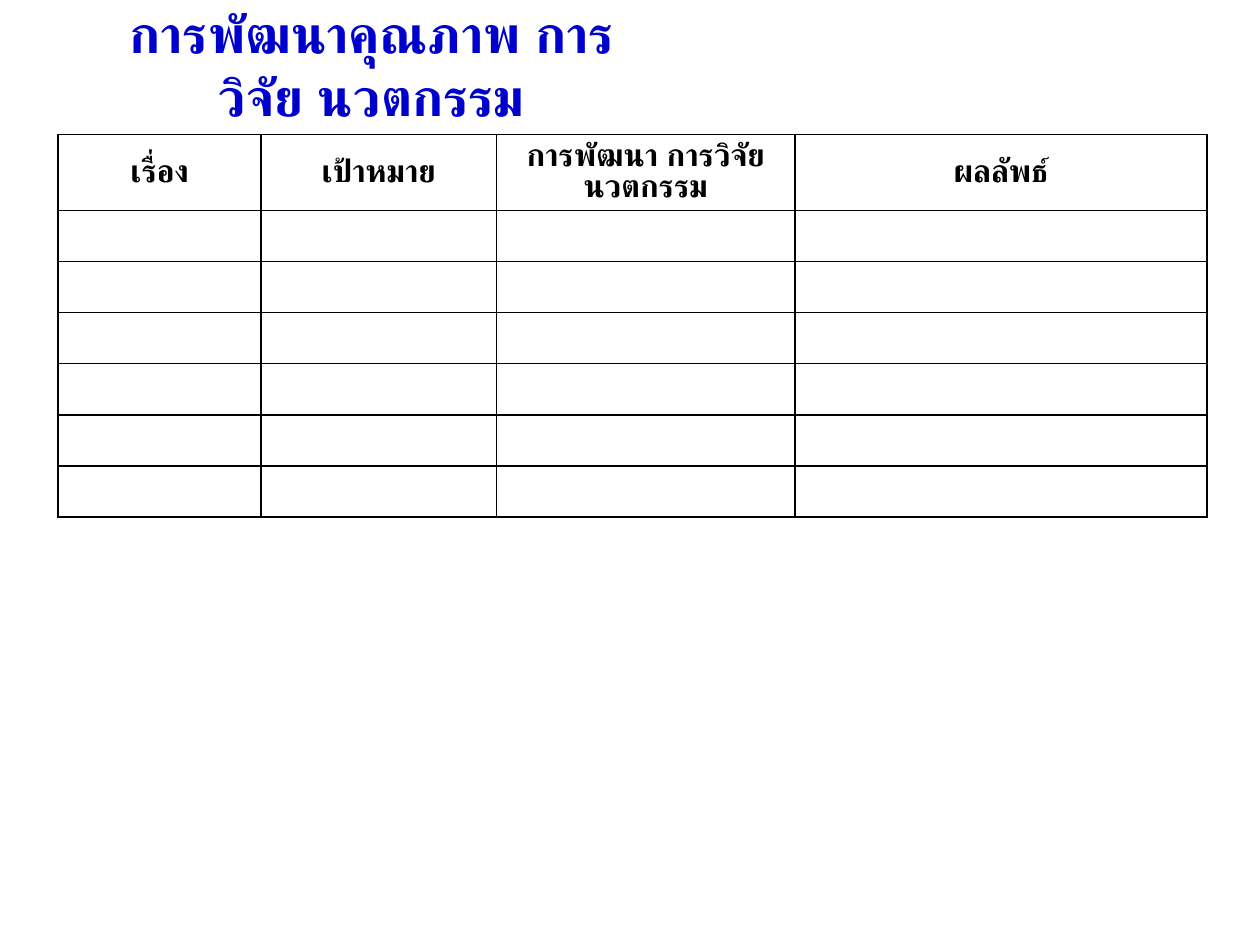
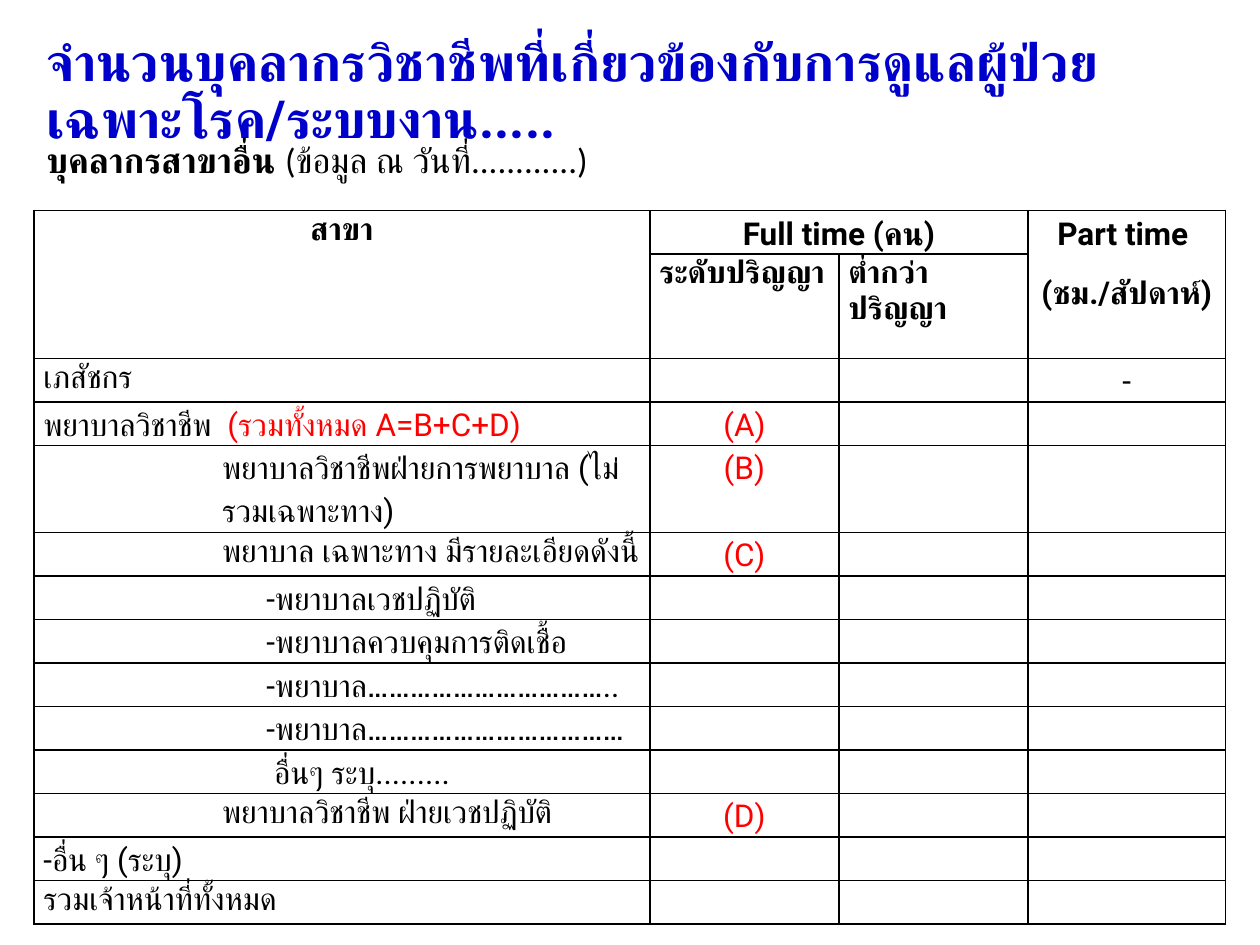
from lxml import etree
from pptx import Presentation
from pptx.dml.color import RGBColor
from pptx.enum import text as t
from pptx.oxml.ns import qn
from pptx.util import Pt

COLORS = {"title": "0000CC", "ink": "000000", "accent": "FF0000"}
FONT = "Roboto"
CENTER, LEFT = t.PP_ALIGN.CENTER, t.PP_ALIGN.LEFT
TOP, MIDDLE = t.MSO_ANCHOR.TOP, t.MSO_ANCHOR.MIDDLE

TOPIC_HEADS = ["เรื่อง", "เป้าหมาย", "การพัฒนา การวิจัย นวตกรรม", "ผลลัพธ์"]
STAFF_ROWS = [
    (0, "เภสัชกร", ""),
    (0, "พยาบาลวิชาชีพ  ", "(A)"),
    (1, "พยาบาลวิชาชีพฝ่ายการพยาบาล (ไม่รวมเฉพาะทาง)", "(B)"),
    (1, "พยาบาล เฉพาะทาง มีรายละเอียดดังนี้", "(C)"),
    (2, "-พยาบาลเวชปฏิบัติ", ""),
    (2, "-พยาบาลควบคุมการติดเชื้อ", ""),
    (2, "-พยาบาล……………………………..", ""),
    (2, "-พยาบาล………………………………", ""),
    (2, " อื่นๆ ระบุ.........", ""),
    (1, "พยาบาลวิชาชีพ ฝ่ายเวชปฏิบัติ", "(D)"),
    (0, "-อื่น ๆ (ระบุ)", ""),
    (0, "รวมเจ้าหน้าที่ทั้งหมด", ""),
]


def style(font, size, color="ink", bold=False, name=FONT):
    font.size, font.bold, font.name = Pt(size), bold, name
    font.color.rgb = RGBColor.from_string(COLORS[color])


def add_text(s, box, anchor=MIDDLE):
    tf = s.shapes.add_textbox(*map(Pt, box)).text_frame
    tf.word_wrap = True
    tf.vertical_anchor = anchor
    return tf


def add_title(s, box, title, align, spacing):
    p = add_text(s, box).paragraphs[0]
    p.text, p.alignment, p.line_spacing = title, align, spacing
    style(p.font, 30, "title", True)


def draw_borders(cell, open_sides=""):
    pr = cell._tc.get_or_add_tcPr()
    for side in "LRTB":
        ln = etree.SubElement(pr, qn("a:ln" + side), w=str(Pt(1)))
        if side in open_sides:
            etree.SubElement(ln, qn("a:noFill"))
        else:
            fill = etree.SubElement(ln, qn("a:solidFill"))
            etree.SubElement(fill, qn("a:srgbClr"), val=COLORS["ink"])


def add_grid(s, box, widths, heights, margin, open_sides=None):
    frame = s.shapes.add_table(len(heights), len(widths), *map(Pt, box))
    table = frame.table
    table.first_row = table.horz_banding = False
    for col, width in zip(table.columns, widths):
        col.width = Pt(width)
    for row, height in zip(table.rows, heights):
        row.height = Pt(height)
    for r in range(len(heights)):
        for c in range(len(widths)):
            cell = table.cell(r, c)
            draw_borders(cell, (open_sides or {}).get((r, c), ""))
            cell.fill.background()
            cell.margin_left = cell.margin_right = Pt(margin)
            cell.margin_top = cell.margin_bottom = 0
    return table


def write(cell, value, align=LEFT, color="ink", bold=False, spacing=1.15, after=10):
    cell.text = value
    for p in cell.text_frame.paragraphs:
        p.alignment, p.line_spacing, p.space_after = align, spacing, Pt(after)
        style(p.font, 18, color, bold)


def topic_table(s, box):
    table = add_grid(s, box, [116, 134.6, 170.6, 235.4], [29.2] * 7, 4.5)
    for c, head in enumerate(TOPIC_HEADS):
        cell = table.cell(0, c)
        write(cell, head, CENTER, bold=True, spacing=1, after=0)
        cell.vertical_anchor = MIDDLE


def staff_header(table):
    for first, last in [((0, 0), (1, 2)), ((0, 3), (0, 4)), ((0, 5), (1, 5))]:
        table.cell(*first).merge(table.cell(*last))
    heads = [(0, 0, "สาขา", CENTER), (0, 3, "Full time (คน)", CENTER),
             (0, 5, "Part time \n(ชม./สัปดาห์)", CENTER),
             (1, 3, "ระดับปริญญา", LEFT), (1, 4, "ต่ำกว่าปริญญา", LEFT)]
    for r, c, head, align in heads:
        write(table.cell(r, c), head, align, bold=True)


def staff_table(s, box):
    heights = [23.2, 46.3, 23.2, 23.5, 46.3] + [23.5] * 7 + [23.2] * 2
    open_sides = {}
    for r, (level, _, _) in enumerate(STAFF_ROWS, 2):
        for c in range(level):
            open_sides[r, c] = "LR" if c else "R"
        if level:
            open_sides[r, level] = "L"
    table = add_grid(s, box, [102.2, 25.2, 224.6, 108, 108, 113], heights, 5.4, open_sides)
    staff_header(table)
    for r, (level, label, mark) in enumerate(STAFF_ROWS, 2):
        if level < 2:
            table.cell(r, level).merge(table.cell(r, 2))
        write(table.cell(r, level), label)
        if mark:
            write(table.cell(r, 3), mark, CENTER, "accent")
    write(table.cell(2, 5), "-", CENTER)
    total = table.cell(3, 0).text_frame.paragraphs[0].add_run()
    total.text = "(รวมทั้งหมด A=B+C+D)"
    style(total.font, 18, "accent")


def staff_subtitle(s, box):
    p = add_text(s, box, TOP).paragraphs[0]
    p.line_spacing, p.space_after = 1.15, Pt(10)
    for part, bold in [("บุคลากรสาขาอื่น ", True), ("(ข้อมูล ณ วันที่............)", False)]:
        r = p.add_run()
        r.text = part
        style(r.font, 20, bold=bold, name="Calibri")


def topic_slide(s):
    add_title(s, (49, 15.8, 326.9, 41.8), "การพัฒนาคุณภาพ การวิจัย นวตกรรม", CENTER, 1)
    topic_table(s, (33.1, 77, 656.6, 204.4))


def staff_slide(s):
    staff_table(s, (19.4, 120.2, 681, 393.8))
    add_title(s, (19.4, 24.5, 681, 57.6),
              "จำนวนบุคลากรวิชาชีพที่เกี่ยวข้องกับการดูแลผู้ป่วย เฉพาะโรค/ระบบงาน.....", LEFT, 0.9)
    staff_subtitle(s, (19.4, 72, 360, 35.3))


def main():
    prs = Presentation()
    prs.slide_width, prs.slide_height = Pt(720), Pt(540)
    for build in (topic_slide, staff_slide):
        build(prs.slides.add_slide(prs.slide_layouts[6]))
    prs.save("out.pptx")


if __name__ == "__main__":
    main()
